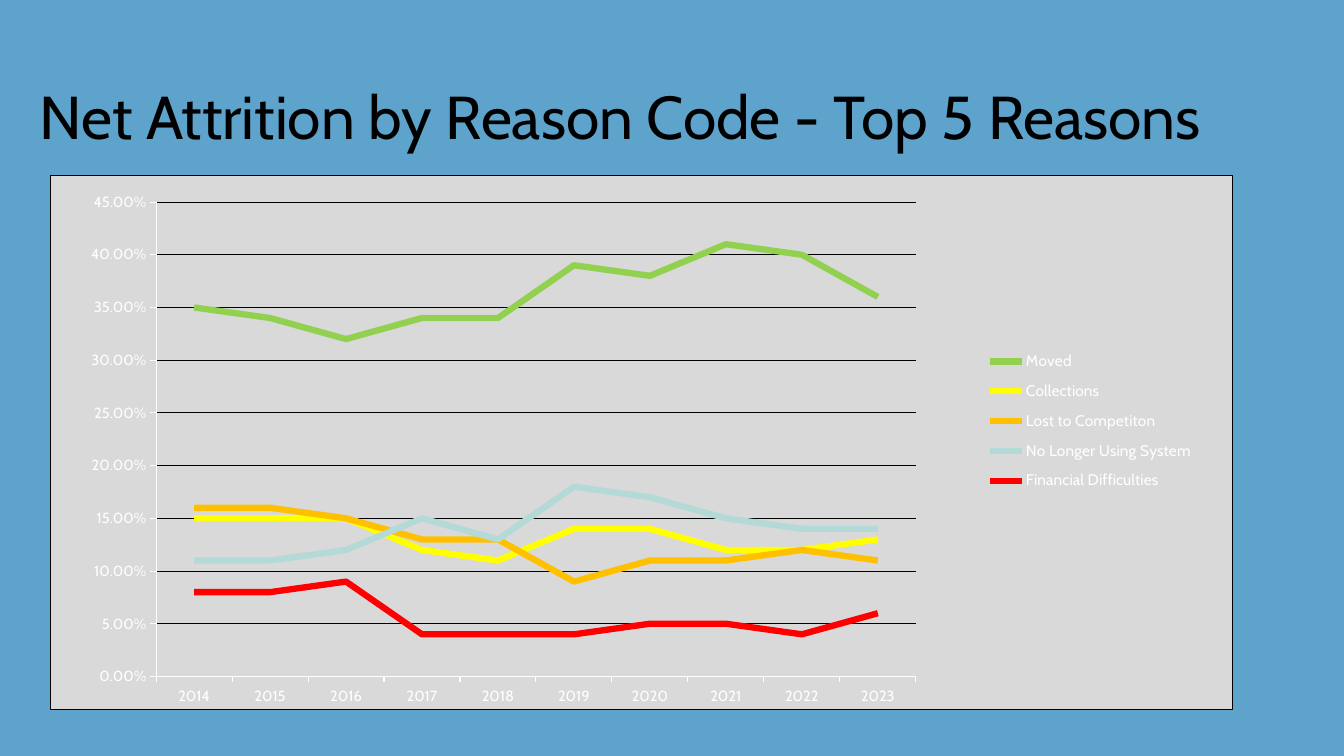
"""Build the slide on net attrition by reason code, with its line chart."""
from dataclasses import dataclass

from lxml import etree
from pptx import Presentation
from pptx import util as u
from pptx.chart.data import CategoryChartData
from pptx.dml.color import RGBColor
from pptx.enum import chart as ch, text
from pptx.oxml import parse_xml
from pptx.oxml.ns import nsdecls, qn


@dataclass(frozen=True)
class Theme:
    font: str = "Cabin"
    background: str = "5DA3CC"
    panel: str = "D9D9D9"
    dark: str = "000000"
    light: str = "FFFFFF"
    moved: str = "92D050"
    collections: str = "FFFF00"
    competition: str = "FFC000"
    unused: str = "B3DAD6"
    financial: str = "FF0000"
    title_size: float = 43.2
    chart_size: float = 10
    axis_size: float = 10.5
    legend_size: float = 11
    thin: float = 0.75
    thick: float = 4.5


theme = Theme()


def write(tf, words, *, size, color, spacing):
    p = tf.paragraphs[0]
    p.alignment = text.PP_ALIGN.LEFT
    p.line_spacing = spacing
    r = p.add_run()
    r.text = words
    r.font.name = theme.font
    r.font.size = u.Pt(size)
    r.font.color.rgb = RGBColor.from_string(color)


def place(parent, before, x, y, w, h, target=""):
    for old in parent.findall(qn("c:layout")):
        parent.remove(old)
    layout = parse_xml(f"<c:layout {nsdecls('c')}><c:manualLayout/></c:layout>")
    settings = [("layoutTarget", target)] if target else []
    settings += [("xMode", "edge"), ("yMode", "edge"), ("x", x), ("y", y), ("w", w), ("h", h)]
    for tag, val in settings:
        etree.SubElement(layout[0], qn(f"c:{tag}"), val=str(val))
    parent.insert(before, layout)


prs = Presentation()
prs.slide_width, prs.slide_height = u.Inches(13.33), u.Inches(7.5)
s = prs.slides.add_slide(prs.slide_layouts[5])
s.background.fill.solid()
s.background.fill.fore_color.rgb = RGBColor.from_string(theme.background)

title = s.shapes.title
title.left, title.top = u.Inches(0.29), u.Inches(0.65)
title.width, title.height = u.Inches(11.73), u.Inches(1.42)
tf = title.text_frame
tf.word_wrap = True
tf.auto_size = text.MSO_AUTO_SIZE.NONE
tf.vertical_anchor = text.MSO_ANCHOR.BOTTOM
tf.margin_bottom = u.Inches(0.56)
write(tf, "Net Attrition by Reason Code - Top 5 Reasons",
      size=theme.title_size, color=theme.dark, spacing=0.9)

reasons = [
    ("Moved", theme.moved, [0.35, 0.34, 0.32, 0.34, 0.34, 0.39, 0.38, 0.41, 0.4, 0.36]),
    ("Collections", theme.collections, [0.15, 0.15, 0.15, 0.12, 0.11, 0.14, 0.14, 0.12, 0.12, 0.13]),
    ("Lost to Competiton", theme.competition, [0.16, 0.16, 0.15, 0.13, 0.13, 0.09, 0.11, 0.11, 0.12, 0.11]),
    ("No Longer Using System", theme.unused, [0.11, 0.11, 0.12, 0.15, 0.13, 0.18, 0.17, 0.15, 0.14, 0.14]),
    ("Financial Difficulties", theme.financial, [0.08, 0.08, 0.09, 0.04, 0.04, 0.04, 0.05, 0.05, 0.04, 0.06]),
]
data = CategoryChartData(number_format="0.00%")
data.categories = [str(year) for year in range(2014, 2024)]
for name, _, rates in reasons:
    data.add_series(name, rates)

chart = s.shapes.add_chart(ch.XL_CHART_TYPE.LINE, u.Inches(0.5), u.Inches(1.74),
                           u.Inches(11.73), u.Inches(5.3), data).chart
chart.has_title = False
chart.font.name = theme.font
chart.font.size = u.Pt(theme.chart_size)
chart.font.color.rgb = RGBColor.from_string(theme.light)
plot = chart.plots[0]
plot.vary_by_categories = False
for series, (_, color, _) in zip(plot.series, reasons):
    series.smooth = False
    series.marker.style = ch.XL_MARKER_STYLE.NONE
    series.format.line.width = u.Pt(theme.thick)
    series.format.line.color.rgb = RGBColor.from_string(color)

for axis in (chart.category_axis, chart.value_axis):
    axis.major_tick_mark = ch.XL_TICK_MARK.OUTSIDE
    axis.minor_tick_mark = ch.XL_TICK_MARK.NONE
    axis.format.line.width = u.Pt(theme.thin)
    axis.format.line.color.rgb = RGBColor.from_string(theme.light)
    font = axis.tick_labels.font
    font.name = theme.font
    font.size = u.Pt(theme.axis_size)
    font.color.rgb = RGBColor.from_string(theme.light)

values = chart.value_axis
values.minimum_scale, values.maximum_scale, values.major_unit = 0, 0.45, 0.05
values.tick_labels.number_format = "0.00%"
values.tick_labels.number_format_is_linked = False
values.has_major_gridlines = True
grid = values.major_gridlines.format.line
grid.width = u.Pt(theme.thin)
grid.color.rgb = RGBColor.from_string(theme.dark)

chart.has_legend = True
legend = chart.legend
legend.position = ch.XL_LEGEND_POSITION.RIGHT
legend.include_in_layout = False
legend.font.name = theme.font
legend.font.size = u.Pt(theme.legend_size)
legend.font.color.rgb = RGBColor.from_string(theme.light)

space = chart.element
frame = space.find(qn("c:chart"))
area = frame.find(qn("c:plotArea"))
place(area, 0, 0.089, 0.049, 0.643, 0.89, target="inner")
place(frame.find(qn("c:legend")), 1, 0.78, 0.31, 0.2, 0.3)

panel = f'<a:solidFill><a:srgbClr val="{theme.panel}"/></a:solidFill>'
border = (f'<a:ln w="{u.Pt(theme.thin)}"><a:solidFill><a:srgbClr val="{theme.dark}"/>'
          "</a:solidFill></a:ln>")
frame.addnext(parse_xml(f"<c:spPr {nsdecls('c', 'a')}>{panel}{border}</c:spPr>"))
area.append(parse_xml(f"<c:spPr {nsdecls('c', 'a')}>{panel}</c:spPr>"))

prs.save("out.pptx")
